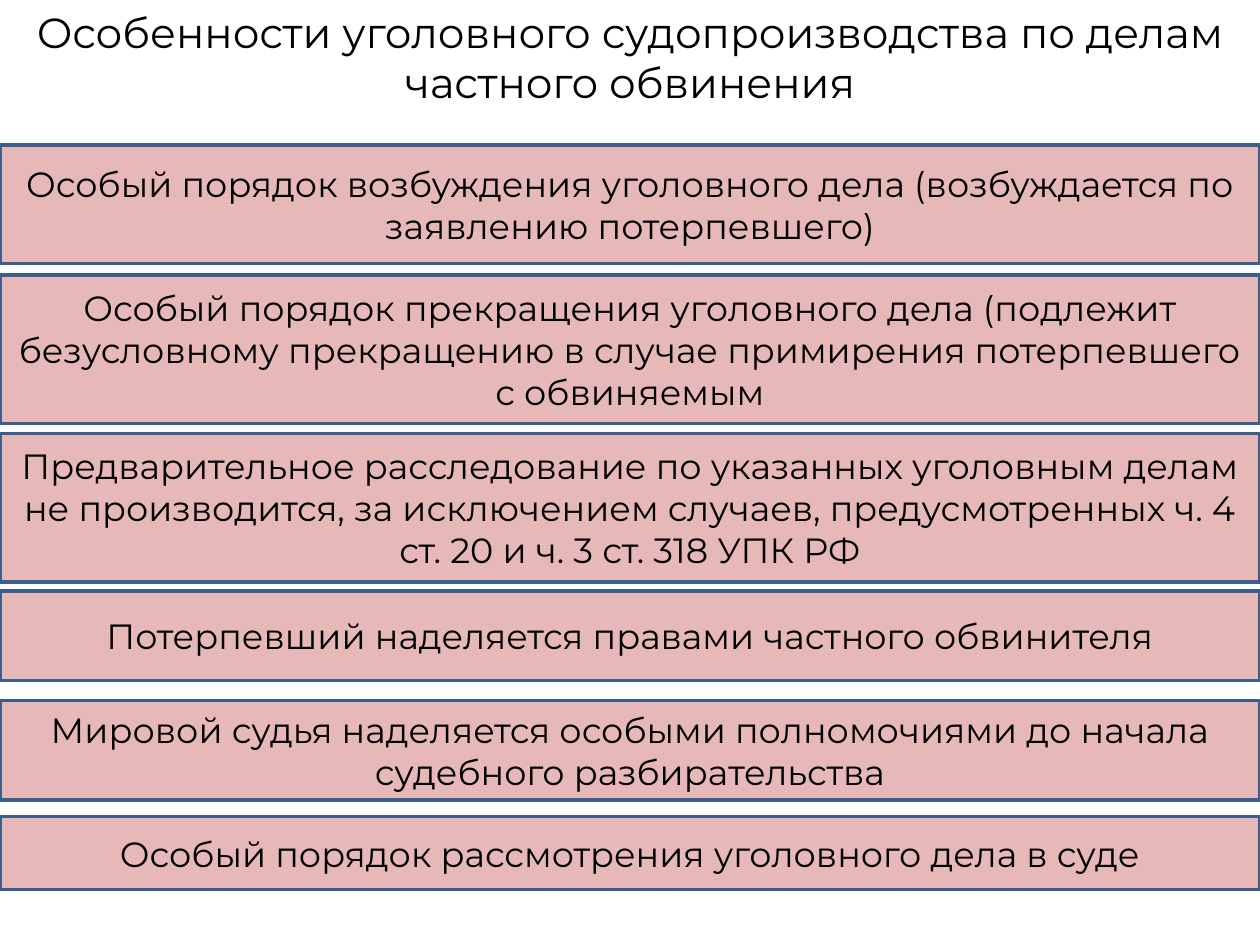
from pptx import Presentation
from pptx.dml.color import RGBColor
from pptx.enum import shapes, text
from pptx.util import Pt

BLACK = RGBColor(0x00, 0x00, 0x00)
PINK = RGBColor(0xE6, 0xB9, 0xB8)
BLUE = RGBColor(0x3A, 0x5F, 0x8C)
FONT = "Montserrat"
WIDTH, HEIGHT = 720, 540

TITLE = "Особенности уголовного судопроизводства по делам частного обвинения"

# Top and height of each bar in points, and its wording
BARS = [
    (82.8, 67.7, "Особый порядок возбуждения уголовного дела "
     "(возбуждается по заявлению потерпевшего)"),
    (157, 85, "Особый порядок прекращения уголовного дела (подлежит "
     "безусловному прекращению в случае примирения потерпевшего с обвиняемым"),
    (247.7, 85, "Предварительное расследование по указанных уголовным делам "
     "не производится, за исключением случаев, предусмотренных "
     "ч. 4 ст. 20 и ч. 3 ст. 318 УПК РФ"),
    (337.7, 51.1, "Потерпевший наделяется правами частного обвинителя"),
    (400.3, 56.9, "Мировой судья наделяется особыми полномочиями "
     "до начала судебного разбирательства"),
    (466.6, 41.8, "Особый порядок рассмотрения уголовного дела в суде"),
]


def write(sp, words, size, anchor):
    tf = sp.text_frame
    tf.word_wrap = True
    tf.vertical_anchor = anchor
    p = tf.paragraphs[0]
    p.alignment = text.PP_ALIGN.CENTER
    r = p.add_run()
    r.text = words
    r.font.name = FONT
    r.font.size = Pt(size)
    r.font.color.rgb = BLACK


def add_title(s, x, y, w, h):
    sp = s.shapes.add_textbox(Pt(x), Pt(y), Pt(w), Pt(h))
    write(sp, TITLE, 24, text.MSO_ANCHOR.TOP)


def add_bars(s, x, y, w):
    for top, h, words in BARS:
        sp = s.shapes.add_shape(shapes.MSO_SHAPE.RECTANGLE,
                                Pt(x), Pt(y + top), Pt(w), Pt(h))
        sp.shadow.inherit = False
        sp.fill.solid()
        sp.fill.fore_color.rgb = PINK
        sp.line.color.rgb = BLUE
        sp.line.width = Pt(2)
        write(sp, words, 20, text.MSO_ANCHOR.MIDDLE)


def main():
    prs = Presentation()
    prs.slide_width, prs.slide_height = Pt(WIDTH), Pt(HEIGHT)
    s = prs.slides.add_slide(prs.slide_layouts[6])

    # Heading
    add_title(s, 0, 0, WIDTH, 65.5)
    # Full-width bars
    add_bars(s, 0, 0, WIDTH)

    prs.save("out.pptx")


if __name__ == "__main__":
    main()
